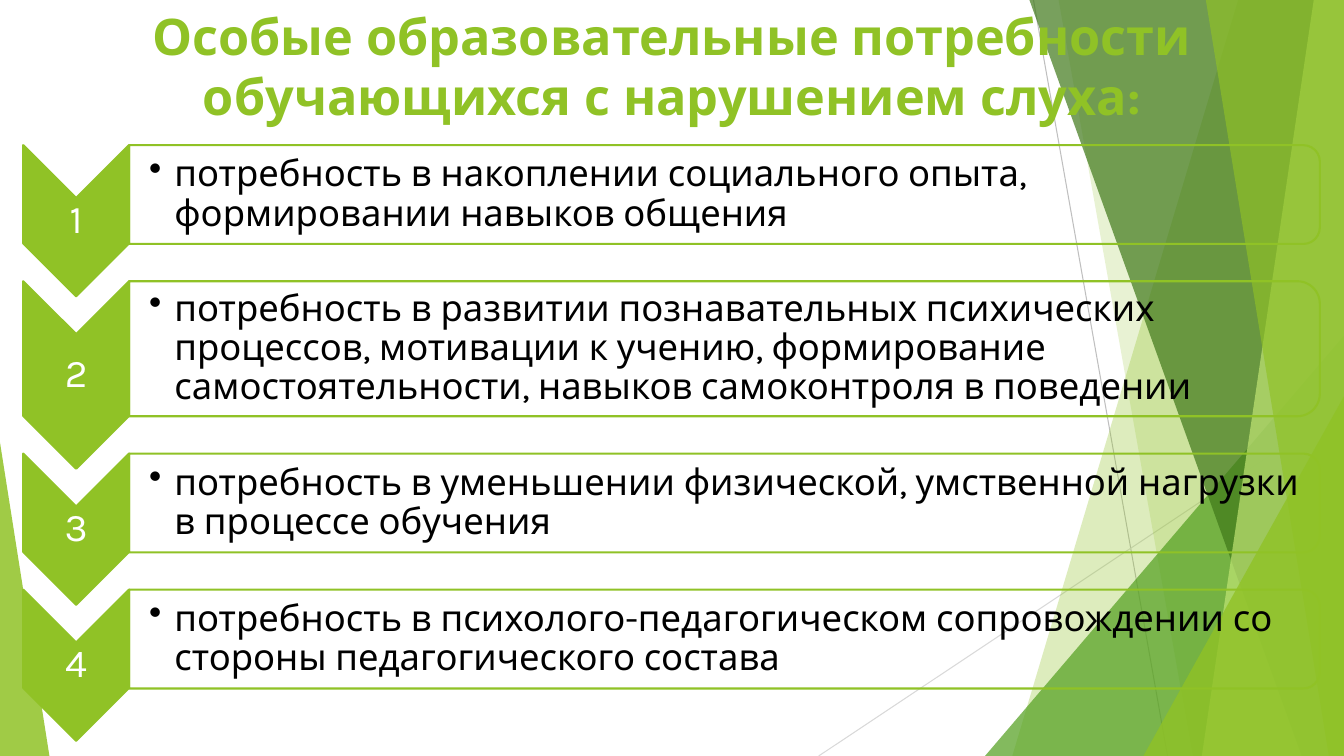
from lxml.etree import SubElement
from pptx import Presentation
from pptx.dml.color import RGBColor
from pptx.enum.shapes import MSO_CONNECTOR, MSO_SHAPE
from pptx.enum.text import MSO_ANCHOR, PP_ALIGN
from pptx.oxml.ns import qn
from pptx.util import Inches, Pt

GREEN = RGBColor(0x90, 0xC2, 0x26)
GRASS = RGBColor(0x54, 0xA0, 0x21)
MOSS = RGBColor(0x3F, 0x78, 0x19)
LIME = RGBColor(0xC0, 0xE4, 0x74)
SILVER = RGBColor(0xBF, 0xBF, 0xBF)
MIST = RGBColor(0xD9, 0xD9, 0xD9)
WHITE = RGBColor(0xFF, 0xFF, 0xFF)
BLACK = RGBColor(0x00, 0x00, 0x00)

WIDE, HIGH = 13.33, 7.5

TITLE = dict(size=Pt(36), bold=True)
DIGIT = dict(size=Pt(28))
BODY = dict(size=Pt(26))


def apply(target, values):
    for key, value in values.items():
        setattr(target, key, value)


class Painter:
    font = "Karla"
    edge = Pt(1.5)

    def __init__(self, slide):
        self.shapes = slide.shapes

    def tint(self, shape, color, alpha):
        shape.shadow.inherit = False
        shape.fill.solid()
        shape.fill.fore_color.rgb = color
        shape.line.fill.background()
        node = shape._element.spPr.find(qn("a:solidFill"))[0]
        SubElement(node, qn("a:alpha")).set("val", str(alpha * 1000))

    def line(self, start, end, color):
        ends = [Inches(v) for v in (*start, *end)]
        line = self.shapes.add_connector(MSO_CONNECTOR.STRAIGHT, *ends)
        line.line.color.rgb = color
        line.line.width = Pt(0.75)
        SubElement(line._element.spPr, qn("a:effectLst"))

    def facet(self, top, low, color, alpha):
        points = [(Inches(x), Inches(y)) for x, y in
                  ((top, 0), (WIDE, 0), (WIDE, HIGH), (low, HIGH))]
        pen = self.shapes.build_freeform(*points[0])
        pen.add_line_segments(points[1:], close=True)
        self.tint(pen.convert_to_shape(), color, alpha)

    def corner(self, left, top, width, tip, color, alpha):
        box = [Inches(v) for v in (left, top, width, HIGH - top)]
        shape = self.shapes.add_shape(MSO_SHAPE.ISOSCELES_TRIANGLE, *box)
        shape.adjustments[0] = tip
        self.tint(shape, color, alpha)

    def turned(self, kind, left, top, width, height, fill=None):
        across = left + (width - height) / 2
        down = top + (height - width) / 2
        box = [Inches(v) for v in (across, down, height, width)]
        shape = self.shapes.add_shape(kind, *box)
        shape.rotation = 90
        shape.shadow.inherit = False
        if fill:
            shape.fill.solid()
            shape.fill.fore_color.rgb = fill
        else:
            shape.fill.background()
        shape.line.color.rgb = GREEN
        shape.line.width = self.edge

    def text(self, words, box, style, color, frame, para, bullet=False):
        shape = self.shapes.add_textbox(*[Inches(v) for v in box])
        apply(shape.text_frame, dict(word_wrap=True, **frame))
        item = shape.text_frame.paragraphs[0]
        item.text = words
        apply(item, para)
        if bullet:
            props = item._p.get_or_add_pPr()
            props.set("marL", str(Inches(0.25)))
            props.set("indent", str(Inches(-0.25)))
            SubElement(props, qn("a:buChar")).set("char", "•")
        for run in item.runs:
            apply(run.font, dict(name=self.font, **style))
            run.font.color.rgb = color


def scene(paint):
    paint.line((10.25, 0), (11.58, HIGH), SILVER)
    paint.line((WIDE, 4.03), (8.12, HIGH), MIST)
    paint.facet(12.28, 10.04, GREEN, 30)
    paint.facet(10.5, 11.83, GREEN, 20)
    paint.corner(9.77, 3.33, 3.56, 1, GRASS, 72)
    paint.facet(10.21, 12.91, MOSS, 70)
    paint.facet(13.03, 11.92, LIME, 70)
    paint.facet(11.96, 13.18, GREEN, 65)
    paint.corner(11.34, 3.93, 1.99, 1, GREEN, 80)
    paint.corner(0, 4.39, 0.49, 0, GREEN, 85)


def needs(paint):
    left, mark, bar, drop, gap = 0.23, 1.05, 11.81, 0.52, 0.37
    rows = [
        (0.98, "потребность в накоплении социального опыта, "
               "формировании навыков общения"),
        (1.34, "потребность в развитии познавательных психических "
               "процессов, мотивации к учению, формирование "
               "самостоятельности, навыков самоконтроля в поведении"),
        (0.98, "потребность в уменьшении физической, умственной "
               "нагрузки в процессе обучения"),
        (0.98, "потребность в психолого-педагогическом "
               "сопровождении со стороны педагогического состава"),
    ]
    inset = Inches(0.02)
    frame = dict(vertical_anchor=MSO_ANCHOR.MIDDLE, margin_left=inset,
                 margin_right=inset, margin_top=inset, margin_bottom=inset)
    wide = dict(frame, margin_left=Inches(0.2))
    top = 1.44
    for count, (height, words) in enumerate(rows, 1):
        paint.turned(MSO_SHAPE.CHEVRON, left, top, mark, height + drop, GREEN)
        paint.text(str(count), (left, top + drop, mark, height - drop),
                   DIGIT, WHITE, frame,
                   dict(alignment=PP_ALIGN.CENTER, line_spacing=0.9))
        paint.turned(MSO_SHAPE.ROUND_2_SAME_RECTANGLE, left + mark, top,
                     bar, height)
        paint.text(words, (left + mark, top + 0.05, bar - 0.05, height - 0.1),
                   BODY, BLACK, wide, dict(line_spacing=0.9), True)
        top += height + gap


def main():
    deck = Presentation()
    apply(deck, dict(slide_width=Inches(WIDE), slide_height=Inches(HIGH)))
    paint = Painter(deck.slides.add_slide(deck.slide_layouts[6]))
    scene(paint)
    paint.text("Особые образовательные потребности\v"
               "обучающихся с нарушением слуха:", (0, 0, WIDE, 1.41),
               TITLE, GREEN, dict(vertical_anchor=MSO_ANCHOR.TOP),
               dict(alignment=PP_ALIGN.CENTER))
    needs(paint)
    deck.save("out.pptx")


if __name__ == "__main__":
    main()
